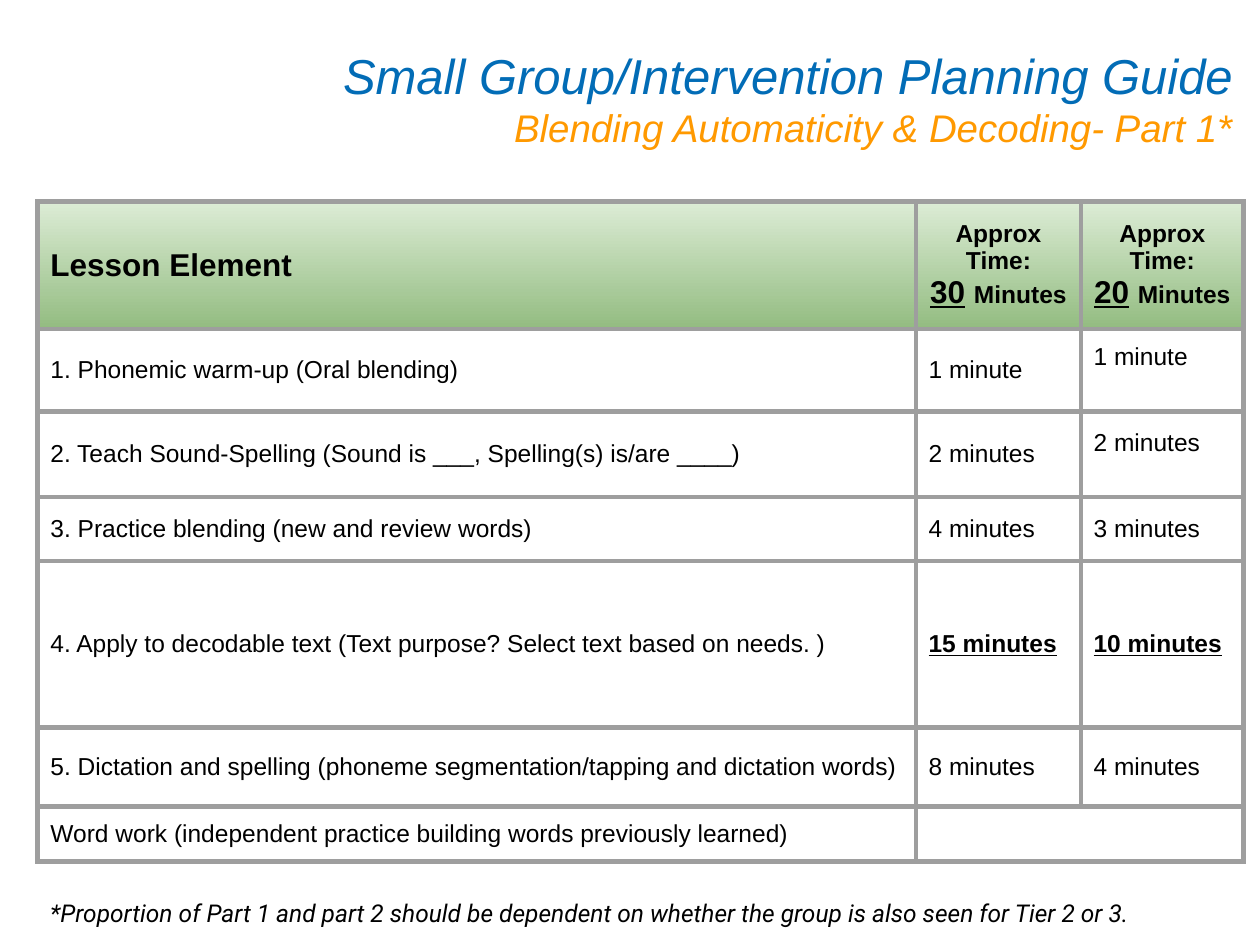
from dataclasses import dataclass

from lxml import etree
from pptx import Presentation
from pptx.dml.color import RGBColor
from pptx.enum import text
from pptx.oxml import ns
from pptx.util import Inches, Pt

BLACK = RGBColor(0x00, 0x00, 0x00)
BLUE = RGBColor(0x02, 0x6C, 0xB6)
ORANGE = RGBColor(0xFF, 0x99, 0x00)
GRAY = RGBColor(0x9E, 0x9E, 0x9E)
PALE_GREEN = RGBColor(0xDC, 0xEC, 0xD5)
GREEN = RGBColor(0x93, 0xBC, 0x81)

MIDDLE = text.MSO_ANCHOR.MIDDLE
BOTTOM = text.MSO_ANCHOR.BOTTOM
CENTER = text.PP_ALIGN.CENTER
RIGHT = text.PP_ALIGN.RIGHT

COLUMN_WIDTHS = (6.97, 1.31, 1.29)
MARGIN = 0.1
RAISED_MARGIN = 0.32
EMPTY_MARGIN = 0.02


@dataclass
class LessonRow:
    height: float
    element: str
    times: tuple[str, str]
    emphasis: bool = False
    raised: bool = False


LESSON_ROWS = (
    LessonRow(0.64, "1. Phonemic warm-up (Oral blending)",
              ("1 minute", "1 minute"), raised=True),
    LessonRow(0.68, "2. Teach Sound-Spelling (Sound is ___, Spelling(s) is/are ____)",
              ("2 minutes", "2 minutes"), raised=True),
    LessonRow(0.51, "3. Practice blending (new and review words)",
              ("4 minutes", "3 minutes")),
    LessonRow(1.32, "4. Apply to decodable text (Text purpose? Select text based on needs. )",
              ("15 minutes", "10 minutes"), emphasis=True),
    LessonRow(0.63, "5. Dictation and spelling (phoneme segmentation/tapping and dictation words)",
              ("8 minutes", "4 minutes")),
    LessonRow(0.43, "Word work (independent practice building words previously learned)",
              ("", "")),
)
HEADER_HEIGHT = 1.01


def style_span(span, size: int, color: RGBColor = BLACK, name: str = "Arial",
               bold: bool = False, italic: bool = False,
               underline: bool = False) -> None:
    font = span.font
    font.name = name
    font.size = Pt(size)
    font.color.rgb = color
    font.bold = bold
    font.italic = italic
    font.underline = underline


def add_text(page, left: float, top: float, width: float, height: float, words: str):
    box = page.shapes.add_textbox(Inches(left), Inches(top), Inches(width), Inches(height))
    box.text_frame.word_wrap = True
    box.text_frame.text = words
    return box.text_frame


def add_borders(cell) -> None:
    properties = cell._tc.get_or_add_tcPr()
    for index, side in enumerate(("lnL", "lnR", "lnT", "lnB")):
        line = etree.Element(ns.qn(f"a:{side}"), w=str(Pt(3)))
        fill = etree.SubElement(line, ns.qn("a:solidFill"))
        etree.SubElement(fill, ns.qn("a:srgbClr"), val=str(GRAY))
        properties.insert(index, line)


def prepare_cell(cell, words: str = "") -> None:
    cell.fill.background()
    add_borders(cell)
    cell.margin_left = cell.margin_right = Inches(MARGIN)
    cell.margin_top = cell.margin_bottom = Inches(MARGIN)
    cell.vertical_anchor = MIDDLE
    cell.text_frame.text = words


def shade_header(cell) -> None:
    cell.fill.gradient()
    cell.fill.gradient_angle = 270
    for stop, color in zip(cell.fill.gradient_stops, (PALE_GREEN, GREEN)):
        stop.color.rgb = color


def fill_header(cells) -> None:
    for cell, words in zip(cells, ("Lesson Element", "Approx Time:", "Approx Time:")):
        prepare_cell(cell, words)
        shade_header(cell)
    style_span(cells[0].text_frame.paragraphs[0].runs[0], 18, bold=True)
    for cell, minutes in zip(cells[1:], ("30", "20")):
        first = cell.text_frame.paragraphs[0]
        first.alignment = CENTER
        style_span(first.runs[0], 14, bold=True)
        second = cell.text_frame.add_paragraph()
        second.alignment = CENTER
        for words, size in ((minutes, 18), (" ", 18), ("Minutes", 14)):
            span = second.add_run()
            span.text = words
            style_span(span, size, bold=True, underline=words == minutes)


def fill_lesson(cells, lesson: LessonRow) -> None:
    for column, words in enumerate((lesson.element, *lesson.times)):
        cell = cells[column]
        prepare_cell(cell, words)
        marked = lesson.emphasis and column > 0
        for span in cell.text_frame.paragraphs[0].runs:
            style_span(span, 14, bold=marked, underline=marked)
        if not words:
            cell.margin_bottom = Inches(EMPTY_MARGIN)
    if lesson.raised:
        cells[2].vertical_anchor = BOTTOM
        cells[2].margin_bottom = Inches(RAISED_MARGIN)


def add_lesson_table(page) -> None:
    heights = (HEADER_HEIGHT, *(lesson.height for lesson in LESSON_ROWS))
    frame = page.shapes.add_table(len(heights), len(COLUMN_WIDTHS), Inches(0.3), Inches(1.6),
                                  Inches(sum(COLUMN_WIDTHS)), Inches(sum(heights)))
    table = frame.table
    table.first_row = False
    table.horz_banding = False
    for column, width in zip(table.columns, COLUMN_WIDTHS):
        column.width = Inches(width)
    for row, height in zip(table.rows, heights):
        row.height = Inches(height)
    rows = [list(row.cells) for row in table.rows]
    fill_header(rows[0])
    for cells, lesson in zip(rows[1:], LESSON_ROWS):
        fill_lesson(cells, lesson)
    rows[-1][1].merge(rows[-1][2])


def main() -> None:
    deck = Presentation()
    deck.slide_width = Inches(10)
    deck.slide_height = Inches(7.5)
    page = deck.slides.add_slide(deck.slide_layouts[6])

    title = add_text(page, 2.33, 0.14, 7.55, 1.27,
                     "Small Group/Intervention Planning Guide\v"
                     "Blending Automaticity & Decoding- Part 1*")
    title.vertical_anchor = MIDDLE
    heading = title.paragraphs[0]
    heading.alignment = RIGHT
    for span, size, color in zip(heading.runs, (28, 22), (BLUE, ORANGE)):
        style_span(span, size, color, italic=True)

    add_lesson_table(page)

    note = add_text(page, 0.3, 7.08, 9.47, 0.34,
                    "*Proportion of Part 1 and part 2 should be dependent on whether "
                    "the group is also seen for Tier 2 or 3.")
    style_span(note.paragraphs[0].runs[0], 14, name="Roboto", italic=True)

    deck.save("out.pptx")


if __name__ == "__main__":
    main()
